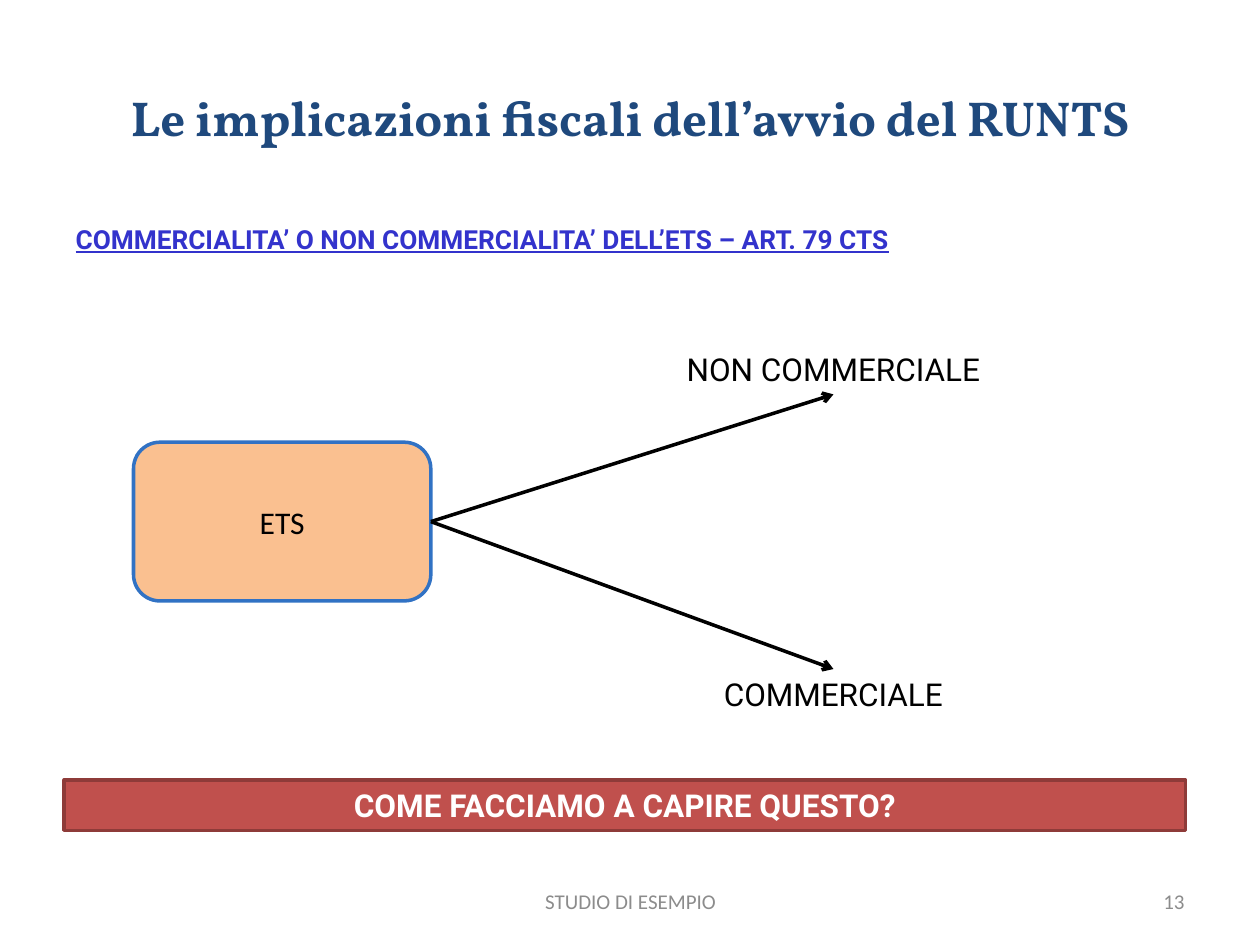
"""Build the slide on commercial and non-commercial ETS bodies."""
import pptx
import pptx.dml.color
import pptx.enum.shapes
import pptx.enum.text
import pptx.oxml
import pptx.oxml.ns
import pptx.util

Inches = pptx.util.Inches
Pt = pptx.util.Pt
ALIGN = pptx.enum.text.PP_ALIGN
ANCHOR = pptx.enum.text.MSO_ANCHOR
SHAPE = pptx.enum.shapes.MSO_SHAPE

COLOURS = {
    "title": "1F497D", "heading": "3333CC", "text": "000000",
    "ets_fill": "FAC090", "ets_line": "3172C4",
    "question_fill": "C0504D", "question_line": "8E3B39",
    "white": "FFFFFF", "footer": "8C8C8C",
}


def rgb(name):
    return pptx.dml.color.RGBColor.from_string(COLOURS[name])


def write(shape, text, size, font, colour, align=ALIGN.CENTER, bold=False, anchor=ANCHOR.TOP):
    frame = shape.text_frame
    frame.word_wrap = True
    frame.vertical_anchor = anchor
    frame.text = text
    paragraph = frame.paragraphs[0]
    paragraph.alignment = align
    style = paragraph.runs[0].font
    style.size = Pt(size)
    style.name = font
    style.bold = bold
    style.color.rgb = rgb(colour)
    return paragraph


deck = pptx.Presentation()
deck.slide_width, deck.slide_height = Inches(10), Inches(7.5)
slide = deck.slides.add_slide(deck.slide_layouts[1])
shapes = slide.shapes

title, heading = shapes.title, slide.placeholders[1]
title.left, title.top, title.width, title.height = [Inches(v) for v in (0.5, 0.3, 9, 1.25)]
write(title, "Le implicazioni fiscali dell’avvio del RUNTS", 28, "Vollkorn", "title",
      bold=True, anchor=ANCHOR.MIDDLE)

heading.left, heading.top, heading.width, heading.height = [Inches(v) for v in (0.5, 1.75, 9, 4.95)]
article = write(heading, "COMMERCIALITA’ O NON COMMERCIALITA’ DELL’ETS – ART. 79 CTS",
                15, "Roboto", "heading", ALIGN.JUSTIFY, bold=True)
article.runs[0].font.underline = True
article.line_spacing = 0.9
article.space_before = Pt(3)
properties = article._p.get_or_add_pPr()
properties.set("marL", "0")
properties.set("indent", "0")
properties.append(pptx.oxml.parse_xml(f"<a:buNone {pptx.oxml.ns.nsdecls('a')}/>"))

boxes = []
for kind, place, name, text, font, text_colour, bold, anchor in [
    (SHAPE.ROUNDED_RECTANGLE, (1.06, 3.51, 2.36, 1.26), "ets", "ETS",
     "Calibri", "text", False, ANCHOR.MIDDLE),
    (SHAPE.RECTANGLE, (0.51, 6.19, 8.9, 0.4), "question", "COME FACCIAMO A CAPIRE QUESTO?",
     "Roboto", "white", True, ANCHOR.TOP),
]:
    box = shapes.add_shape(kind, *[Inches(v) for v in place])
    box.shadow.inherit = False
    box.fill.solid()
    box.fill.fore_color.rgb = rgb(f"{name}_fill")
    box.line.color.rgb = rgb(f"{name}_line")
    box.line.width = Pt(2)
    write(box, text, 18, font, text_colour, bold=bold, anchor=anchor)
    boxes.append(box)
ets = boxes[0]

for text, top, side in [("NON COMMERCIALE", 2.73, 2), ("COMMERCIALE", 5.31, 0)]:
    outcome = shapes.add_textbox(Inches(5), Inches(top), Inches(3.23), Inches(0.4))
    write(outcome, text, 18, "Roboto", "text")
    arrow = shapes.add_connector(pptx.enum.shapes.MSO_CONNECTOR.STRAIGHT, 0, 0, 0, 0)
    arrow.begin_connect(ets, 3)
    arrow.end_connect(outcome, side)
    arrow.line.color.rgb = rgb("text")
    arrow.line.width = Pt(2)
    arrow.line._get_or_add_ln().append(
        pptx.oxml.parse_xml(f'<a:tailEnd {pptx.oxml.ns.nsdecls("a")} type="arrow"/>'))
    arrow._element.spPr.append(
        pptx.oxml.parse_xml(f"<a:effectLst {pptx.oxml.ns.nsdecls('a')}/>"))

for text, left, width, align in [("STUDIO DI ESEMPIO", 3.42, 3.17, ALIGN.CENTER),
                                 ("13", 7.17, 2.33, ALIGN.RIGHT)]:
    footer = shapes.add_textbox(Inches(left), Inches(6.95), Inches(width), Inches(0.4))
    write(footer, text, 12, "Calibri", "footer", align, anchor=ANCHOR.MIDDLE)

deck.save("out.pptx")
